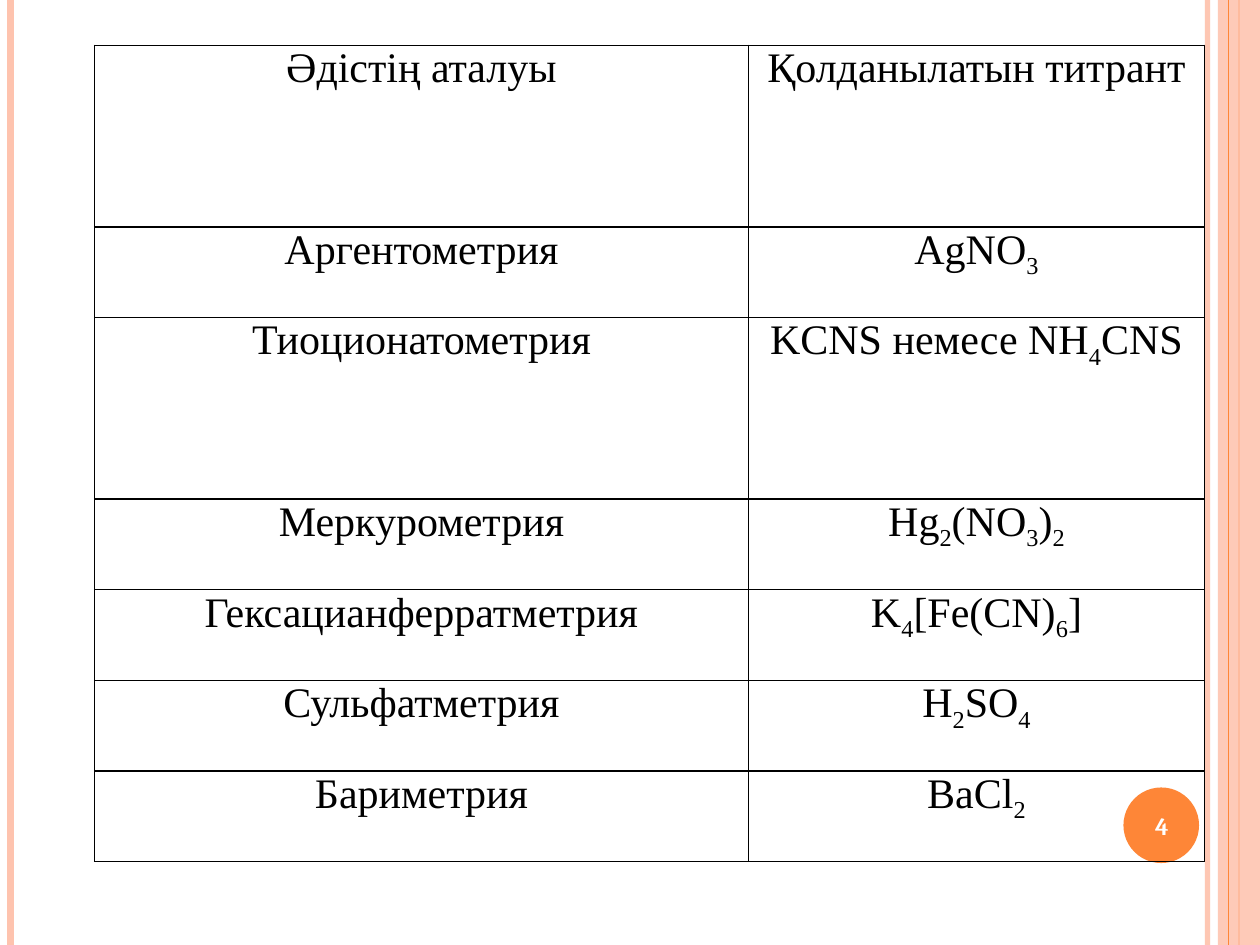
import itertools

import pptx
import pptx.dml.color
import pptx.enum.shapes
import pptx.enum.text
import pptx.oxml.ns
import pptx.util
from lxml import etree

Pt = pptx.util.Pt
RGBColor = pptx.dml.color.RGBColor
SHAPE = pptx.enum.shapes.MSO_SHAPE
qn = pptx.oxml.ns.qn

ORANGE = RGBColor(0xFE, 0x86, 0x37)
PEACH = RGBColor(0xFE, 0xC3, 0xAE)
BLACK = RGBColor(0, 0, 0)
WHITE = RGBColor(0xFF, 0xFF, 0xFF)

WIDTH, HEIGHT = 720, 540
ROWS = [
    ("Әдістің аталуы", "Қолданылатын титрант"),
    ("Аргентометрия", "AgNO3"),
    ("Тиоционатометрия", "KCNS немесе NH4CNS"),
    ("Меркурометрия", "Hg2(NO3)2"),
    ("Гексацианферратметрия", "K4[Fe(CN)6]"),
    ("Сульфатметрия", "H2SO4"),
    ("Бариметрия", "BaCl2"),
]
TABLE_LEFT, TABLE_TOP = 54, 26
COL_WIDTHS = (373.7, 260.6)
ROW_HEIGHT = 51.84
TALL_ROWS = (0, 2)
PAGE_NUMBER = "4"


def set_alpha(fill_or_line, percent):
    color = next(fill_or_line.iter(qn("a:srgbClr")))
    etree.SubElement(color, qn("a:alpha")).set("val", str(percent * 1000))


def add_stripe(s, x, width, color, alpha=None):
    """Draw a vertical line over the full slide height."""
    line = s.shapes.add_connector(
        pptx.enum.shapes.MSO_CONNECTOR.STRAIGHT, Pt(x), 0, Pt(x), Pt(HEIGHT))
    line.line.color.rgb = color
    line.line.width = Pt(width)
    if alpha:
        set_alpha(line.line._ln, alpha)
    etree.SubElement(line._element.spPr, qn("a:effectLst"))


def add_block(s, kind, x, y, w, h, color, alpha=None):
    sp = s.shapes.add_shape(kind, Pt(x), Pt(y), Pt(w), Pt(h))
    sp.shadow.inherit = False
    sp.fill.solid()
    sp.fill.fore_color.rgb = color
    sp.line.fill.background()
    if alpha:
        set_alpha(sp._element.spPr, alpha)


def write(tf, text, size, font, color, bold=False, before=None, subscripts=False):
    """Write one centred paragraph; with subscripts, digits are lowered."""
    p = tf.paragraphs[0]
    p.alignment = pptx.enum.text.PP_ALIGN.CENTER
    if before is not None:
        p.space_before = Pt(before)
    for is_digit, chars in itertools.groupby(text, str.isdigit):
        r = p.add_run()
        r.text = "".join(chars)
        r.font.size = Pt(size)
        r.font.name = font
        r.font.bold = bold
        r.font.color.rgb = color
        if subscripts and is_digit:
            r._r.get_or_add_rPr().set("baseline", "-25000")


def set_borders(cell, color, width):
    tcPr = cell._tc.get_or_add_tcPr()
    for side in ("lnL", "lnR", "lnT", "lnB"):
        ln = etree.SubElement(tcPr, qn("a:" + side), w=str(Pt(width)))
        fill = etree.SubElement(ln, qn("a:solidFill"))
        etree.SubElement(fill, qn("a:srgbClr"), val=str(color))


def add_methods_table(s):
    heights = [ROW_HEIGHT * (2 if i in TALL_ROWS else 1) for i in range(len(ROWS))]
    table = s.shapes.add_table(
        len(ROWS), len(COL_WIDTHS), Pt(TABLE_LEFT), Pt(TABLE_TOP),
        Pt(sum(COL_WIDTHS)), Pt(sum(heights))).table
    table.first_row = table.horz_banding = False
    for col, width in zip(table.columns, COL_WIDTHS):
        col.width = Pt(width)
    for row, height, texts in zip(table.rows, heights, ROWS):
        row.height = Pt(height)
        for cell, text in zip(row.cells, texts):
            cell.margin_left = cell.margin_right = Pt(5)
            cell.margin_top = cell.margin_bottom = 0
            set_borders(cell, BLACK, 1)
            cell.fill.background()
            write(cell.text_frame, text, 24, "Times New Roman", BLACK,
                  before=14.4, subscripts=True)


def main():
    prs = pptx.Presentation()
    prs.slide_width, prs.slide_height = Pt(WIDTH), Pt(HEIGHT)
    s = prs.slides.add_slide(prs.slide_layouts[6])

    add_stripe(s, 690, 3, PEACH, alpha=93)
    add_stripe(s, 6, 4.5, PEACH)
    add_stripe(s, 708, 1.5, ORANGE)
    add_block(s, SHAPE.RECTANGLE, 696, 0, 24, HEIGHT, PEACH, alpha=87)
    add_stripe(s, 702, 0.75, ORANGE)
    add_block(s, SHAPE.OVAL, 642, 450, 43.2, 43.2, ORANGE)

    add_methods_table(s)

    tf = s.shapes.add_textbox(Pt(640), Pt(451.4), Pt(48), Pt(41)).text_frame
    tf.word_wrap = True
    tf.vertical_anchor = pptx.enum.text.MSO_ANCHOR.MIDDLE
    write(tf, PAGE_NUMBER, 14, "Cambria", WHITE, bold=True)

    prs.save("out.pptx")


if __name__ == "__main__":
    main()
